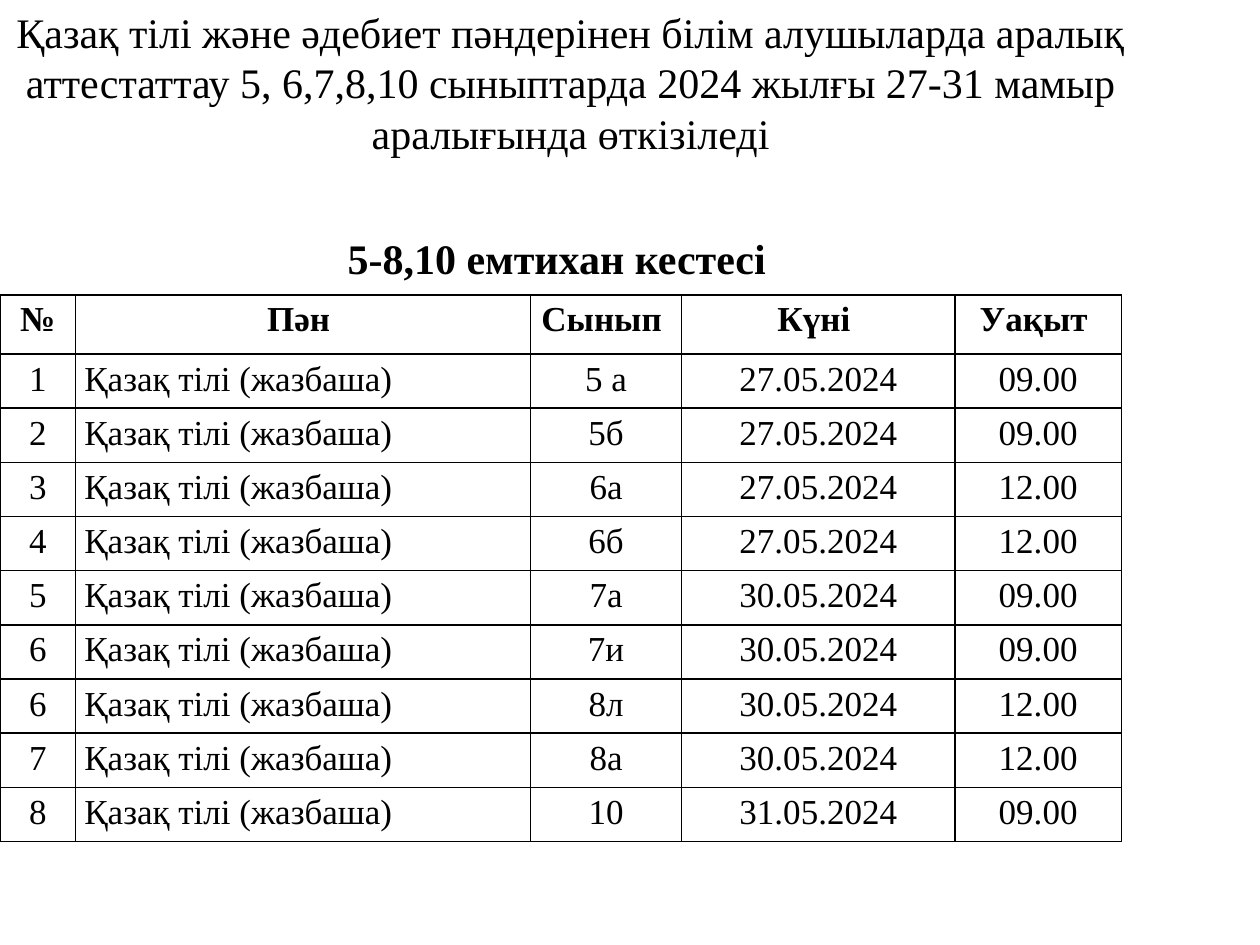
"""Builds a one-slide exam timetable with a heading, a caption and a ruled table."""
from lxml.etree import SubElement
from pptx import Presentation
from pptx.dml.color import RGBColor
from pptx.enum.text import MSO_ANCHOR as ANCHOR, MSO_AUTO_SIZE as AUTO, PP_ALIGN as ALIGN
from pptx.oxml.ns import qn
from pptx.util import Inches, Pt

COLORS = {"ink": "000000"}
FONT = "Times New Roman"
SUBJECT = "Қазақ тілі (жазбаша)"
HEADER = ["№", "Пән ", "Сынып ", "Күні ", "Уақыт "]
EXAMS = [
    ("1", "5 а", "27.05.2024", "09.00"),
    ("2", "5б", "27.05.2024", "09.00"),
    ("3", "6а", "27.05.2024", "12.00"),
    ("4", "6б", "27.05.2024", "12.00"),
    ("5", "7а", "30.05.2024", "09.00"),
    ("6", "7и", "30.05.2024", "09.00"),
    ("6", "8л", "30.05.2024", "12.00"),
    ("7", "8а", "30.05.2024", "12.00"),
    ("8", "10", "31.05.2024", "09.00"),
]


class Deck:
    def __init__(self, prs, layout):
        self.slide = prs.slides.add_slide(layout)
        self.ink = RGBColor.from_string(COLORS["ink"])

    def add_text(self, tf, text, size, bold=False, align=ALIGN.LEFT):
        p = tf.paragraphs[0]
        p.alignment = align
        r = p.add_run()
        r.text = text
        r.font.name, r.font.size, r.font.bold = FONT, Pt(size), bold
        r.font.color.rgb = self.ink
        return p

    def title(self, text, left, top, width, height):
        sp = self.slide.shapes.title
        sp.left, sp.top, sp.width, sp.height = map(Inches, (left, top, width, height))
        tf = sp.text_frame
        tf.word_wrap, tf.auto_size = True, AUTO.SHAPE_TO_FIT_TEXT
        tf.vertical_anchor = ANCHOR.TOP
        self.add_text(tf, text, 24, align=ALIGN.CENTER)

    def caption(self, text, left, top, width, height):
        sp = self.slide.shapes.add_textbox(*map(Inches, (left, top, width, height)))
        tf = sp.text_frame
        tf.word_wrap, tf.auto_size = False, AUTO.SHAPE_TO_FIT_TEXT
        self.add_text(tf, text, 24, bold=True)

    def borders(self, cell):
        tc_pr = cell._tc.get_or_add_tcPr()
        for side in ("lnL", "lnR", "lnT", "lnB"):
            ln = SubElement(tc_pr, qn(f"a:{side}"), w=str(Pt(1)))
            fill = SubElement(ln, qn("a:solidFill"))
            SubElement(fill, qn("a:srgbClr"), val=COLORS["ink"])

    def table(self, rows, left, top, widths, heights):
        box = map(Inches, (left, top, sum(widths), sum(heights)))
        table = self.slide.shapes.add_table(len(rows), len(widths), *box).table
        table.first_row = table.horz_banding = False
        for column, width in zip(table.columns, widths):
            column.width = Inches(width)
        for i, (values, height) in enumerate(zip(rows, heights)):
            table.rows[i].height = Inches(height)
            for j, text in enumerate(values):
                cell = table.cell(i, j)
                self.borders(cell)
                cell.fill.background()
                cell.margin_left = cell.margin_right = Inches(0.07)
                cell.margin_top = cell.margin_bottom = 0
                align = ALIGN.LEFT if i and j == 1 else ALIGN.CENTER
                p = self.add_text(cell.text_frame, text, 20, bold=i == 0, align=align)
                p.line_spacing = 1.15


def main():
    prs = Presentation()
    prs.slide_width, prs.slide_height = Inches(10), Inches(7.5)
    deck = Deck(prs, prs.slide_layouts[5])
    deck.title("Қазақ тілі және әдебиет пәндерінен білім алушыларда аралық "
               "аттестаттау 5, 6,7,8,10 сыныптарда 2024 жылғы 27-31 мамыр "
               "аралығында өткізіледі", 0, 0, 9.06, 1.31)
    rows = [HEADER] + [(number, SUBJECT, *rest) for number, *rest in EXAMS]
    deck.table(rows, 0, 2.34, [0.6, 3.61, 1.2, 2.17, 1.32], [0.47] + [0.43] * len(EXAMS))
    deck.caption("5-8,10 емтихан кестесі", 2.66, 1.8, 3.52, 0.5)
    prs.save("out.pptx")


if __name__ == "__main__":
    main()
